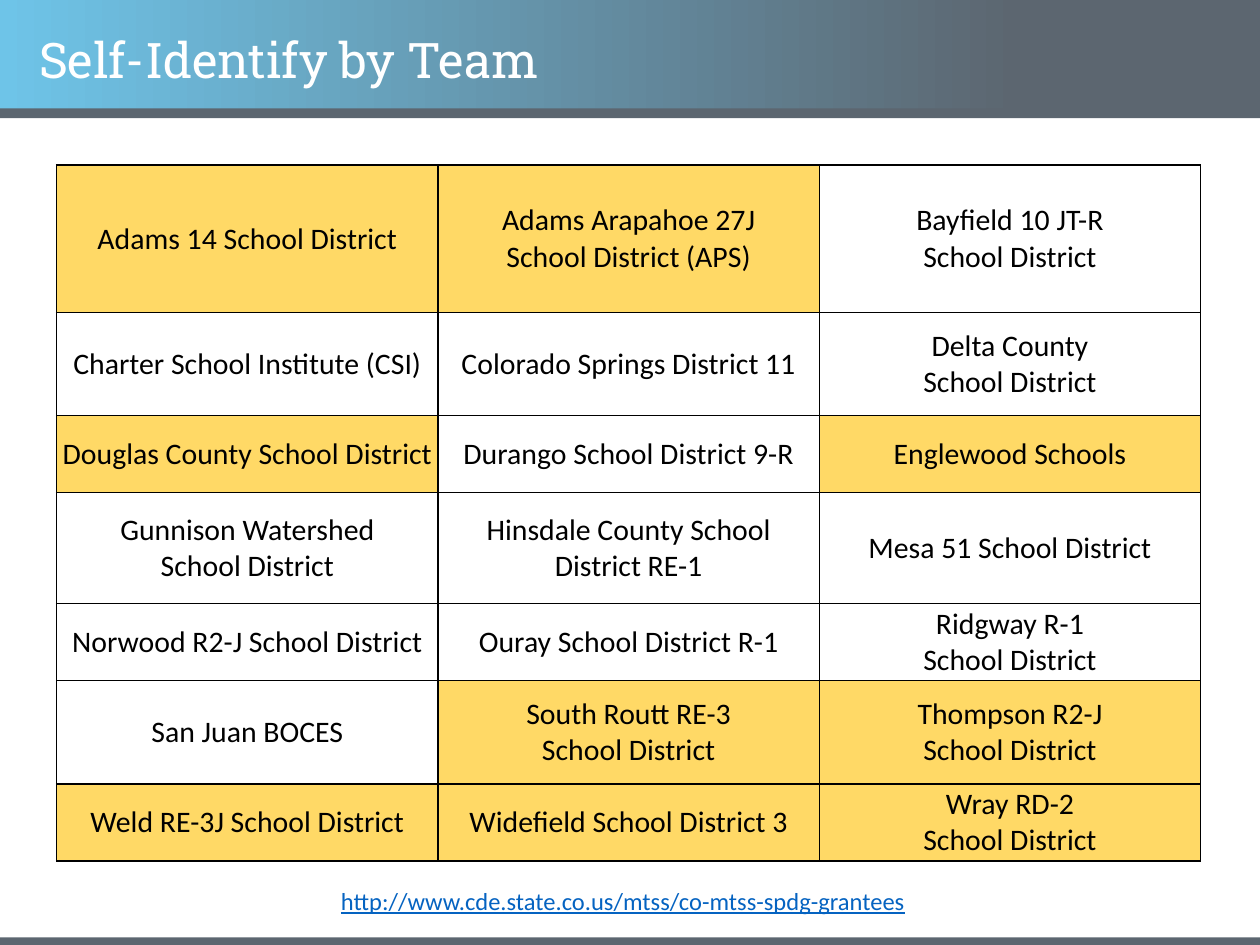
"""Build the slide that lists the school districts by team."""
from typing import Any, NamedTuple

from pptx import Presentation
from pptx.dml.color import RGBColor
from pptx.enum.shapes import MSO_SHAPE
from pptx.enum.text import MSO_ANCHOR, PP_ALIGN
from pptx.oxml import parse_xml
from pptx.oxml.ns import nsdecls
from pptx.util import Pt

RECTANGLE = MSO_SHAPE.RECTANGLE
MIDDLE = MSO_ANCHOR.MIDDLE
CENTER, LEFT = PP_ALIGN.CENTER, PP_ALIGN.LEFT

SKY = RGBColor(0x6E, 0xC4, 0xE8)
SLATE = RGBColor(0x5C, 0x66, 0x70)
GOLD = RGBColor(0xFF, 0xD9, 0x66)
LINK_BLUE = RGBColor(0x05, 0x63, 0xC1)
BLACK = RGBColor(0, 0, 0)
WHITE = RGBColor(0xFF, 0xFF, 0xFF)

SLIDE_WIDTH, SLIDE_HEIGHT = 720, 540
TABLE_LEFT, TABLE_TOP, COLUMN_WIDTH = 32.4, 94.4, 217.9
CELL_MARGIN = 0.72
BORDER_WIDTH = 1

TITLE_FONT = {"name": "Roboto Slab", "size": Pt(28), "bold": False, "color": WHITE}
DISTRICT_FONT = {"name": "Calibri", "size": Pt(17), "bold": False, "color": BLACK}
LINK_FONT = {"name": "Calibri", "size": Pt(14), "underline": True, "color": LINK_BLUE}


class Band(NamedTuple):
    top: float
    height: float
    gradient: bool = False


class District(NamedTuple):
    name: str
    chosen: bool = False


class TeamRow(NamedTuple):
    height: float
    districts: tuple[District, ...]


BANDS = (Band(0, 62.5, gradient=True), Band(62, 5.6), Band(535.7, 5.6))

TEAM_ROWS = (
    TeamRow(84.2, (
        District("Adams 14 School District", True),
        District("Adams Arapahoe 27J\nSchool District (APS)", True),
        District("Bayfield 10 JT-R\nSchool District"),
    )),
    TeamRow(59, (
        District("Charter School Institute (CSI)"),
        District("Colorado Springs District 11"),
        District("Delta County\nSchool District"),
    )),
    TeamRow(44, (
        District("Douglas County School District", True),
        District("Durango School District 9-R"),
        District("Englewood Schools", True),
    )),
    TeamRow(63.4, (
        District("Gunnison Watershed\nSchool District"),
        District("Hinsdale County School\nDistrict RE-1"),
        District("Mesa 51 School District"),
    )),
    TeamRow(44, (
        District("Norwood R2-J School District"),
        District("Ouray School District R-1"),
        District("Ridgway R-1\nSchool District"),
    )),
    TeamRow(59, (
        District("San Juan BOCES"),
        District("South Routt RE-3\nSchool District", True),
        District("Thompson R2-J\nSchool District", True),
    )),
    TeamRow(44, (
        District("Weld RE-3J School District", True),
        District("Widefield School District 3", True),
        District("Wray RD-2\nSchool District", True),
    )),
)


def write(paragraph: Any, text: str, font: dict[str, Any], alignment: Any) -> None:
    """Fill a paragraph with text in the given format."""
    paragraph.text = text
    paragraph.alignment = alignment
    for run in paragraph.runs:
        for attribute, value in font.items():
            if attribute == "color":
                run.font.color.rgb = value
            else:
                setattr(run.font, attribute, value)


def draw_band(slide: Any, band: Band) -> Any:
    """Draw a full-width band and return it."""
    bar = slide.shapes.add_shape(
        RECTANGLE, 0, Pt(band.top), Pt(SLIDE_WIDTH), Pt(band.height))
    bar.shadow.inherit = False
    bar.line.fill.background()
    if band.gradient:
        bar.fill.gradient()
        bar.fill.gradient_angle = 0
        for stop, position, color in zip(
                bar.fill.gradient_stops, (0, 0.81), (SKY, SLATE)):
            stop.position = position
            stop.color.rgb = color
    else:
        bar.fill.solid()
        bar.fill.fore_color.rgb = SLATE
    return bar


def draw_borders(cell: Any) -> None:
    """Give a cell a solid line on each side."""
    properties = cell._tc.get_or_add_tcPr()
    for side in ("lnL", "lnR", "lnT", "lnB"):
        properties.append(parse_xml(
            f'<a:{side} {nsdecls("a")} w="{Pt(BORDER_WIDTH)}"><a:solidFill>'
            f'<a:srgbClr val="{BLACK}"/></a:solidFill></a:{side}>'))


def fill_cell(cell: Any, district: District) -> None:
    """Write a district into its cell and mark it if chosen."""
    for side in ("left", "right", "top", "bottom"):
        setattr(cell, f"margin_{side}", Pt(CELL_MARGIN))
    cell.vertical_anchor = MIDDLE
    draw_borders(cell)
    if district.chosen:
        cell.fill.solid()
        cell.fill.fore_color.rgb = GOLD
    else:
        cell.fill.background()
    write(cell.text_frame.paragraphs[0], district.name, DISTRICT_FONT, CENTER)


def draw_teams(slide: Any, team_rows: tuple[TeamRow, ...]) -> None:
    """Draw the table of districts."""
    column_count = len(team_rows[0].districts)
    teams = slide.shapes.add_table(
        len(team_rows), column_count, Pt(TABLE_LEFT), Pt(TABLE_TOP),
        Pt(COLUMN_WIDTH * column_count), Pt(sum(row.height for row in team_rows))).table
    teams.first_row = teams.horz_banding = False
    for column in teams.columns:
        column.width = Pt(COLUMN_WIDTH)
    for row, team_row in zip(teams.rows, team_rows):
        row.height = Pt(team_row.height)
        for cell, district in zip(row.cells, team_row.districts):
            fill_cell(cell, district)


def main() -> None:
    """Build and save the presentation."""
    deck = Presentation()
    deck.slide_width, deck.slide_height = Pt(SLIDE_WIDTH), Pt(SLIDE_HEIGHT)
    slide = deck.slides.add_slide(deck.slide_layouts[5])

    bars = [draw_band(slide, band) for band in BANDS]

    title = slide.shapes.title
    bars[-1].element.addnext(title.element)
    title.left, title.top, title.width, title.height = Pt(15.1), Pt(15.1), Pt(620.6), Pt(41)
    title.text_frame.vertical_anchor = MIDDLE
    heading = title.text_frame.paragraphs[0]
    heading.line_spacing = 0.9
    write(heading, "Self-Identify by Team", TITLE_FONT, LEFT)

    draw_teams(slide, TEAM_ROWS)

    source = slide.shapes.add_textbox(Pt(132.5), Pt(502.6), Pt(447), Pt(24.5))
    source.text_frame.word_wrap = True
    write(source.text_frame.paragraphs[0],
          "http://www.cde.state.co.us/mtss/co-mtss-spdg-grantees", LINK_FONT, CENTER)

    deck.save("out.pptx")


if __name__ == "__main__":
    main()
